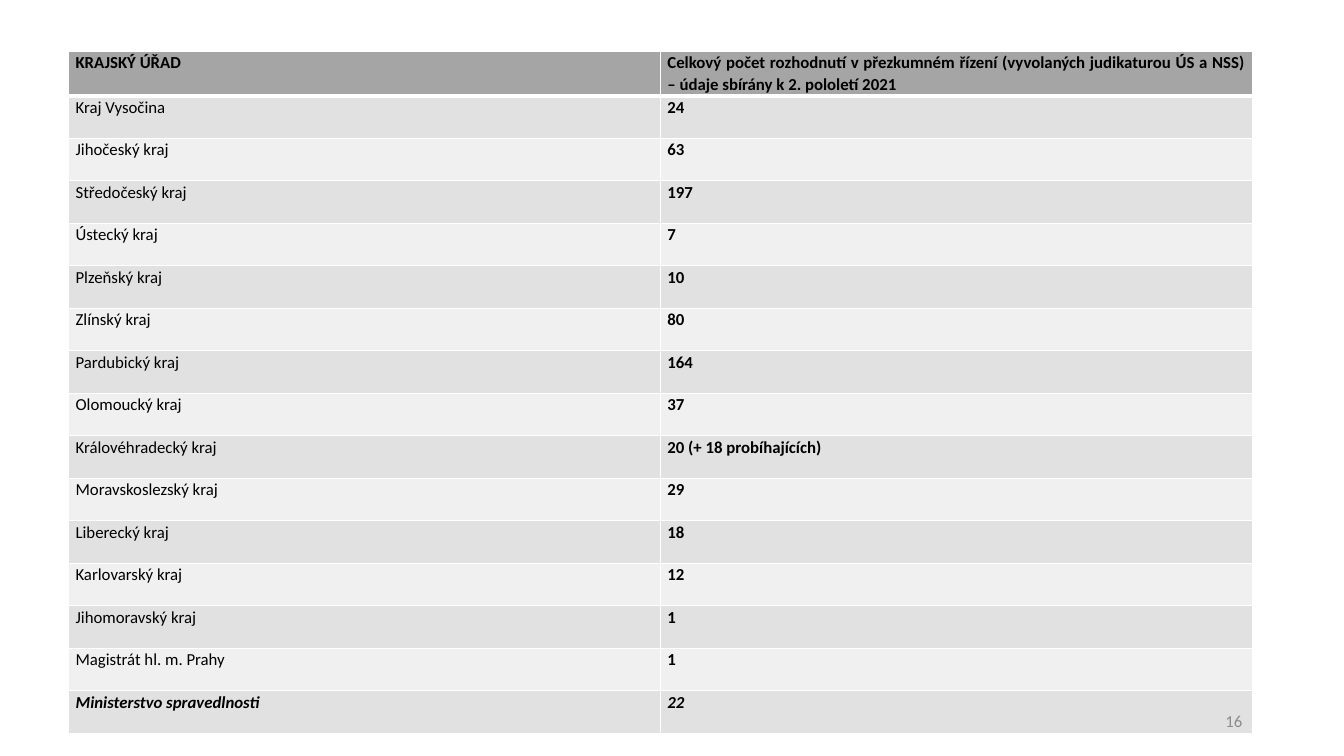
"""Build a slide with a table of review decisions by regional authority."""
from lxml.etree import SubElement
from pptx import Presentation
from pptx.dml.color import RGBColor
from pptx.enum.text import MSO_ANCHOR as Anchor, PP_ALIGN as Align
from pptx.oxml.ns import qn
from pptx.util import Inches, Pt

FONT = "Calibri"
BLACK = RGBColor(0x00, 0x00, 0x00)
WHITE = RGBColor(0xFF, 0xFF, 0xFF)
HEADER_GRAY = RGBColor(0xA5, 0xA5, 0xA5)
DARK_BAND = RGBColor(0xE1, 0xE1, 0xE1)
LIGHT_BAND = RGBColor(0xF0, 0xF0, 0xF0)
NUMBER_GRAY = RGBColor(0x8C, 0x8C, 0x8C)

HEADER = (
    "KRAJSKÝ ÚŘAD",
    "Celkový počet rozhodnutí v přezkumném řízení (vyvolaných judikaturou "
    "ÚS a NSS) – údaje sbírány k 2. pololetí 2021",
)
REGIONS = [
    ("Kraj Vysočina", "24"),
    ("Jihočeský kraj", "63"),
    ("Středočeský kraj", "197"),
    ("Ústecký kraj", "7"),
    ("Plzeňský kraj", "10"),
    ("Zlínský kraj", "80"),
    ("Pardubický kraj", "164"),
    ("Olomoucký kraj", "37"),
    ("Královéhradecký kraj", "20 (+ 18 probíhajících)"),
    ("Moravskoslezský kraj", "29"),
    ("Liberecký kraj", "18"),
    ("Karlovarský kraj", "12"),
    ("Jihomoravský kraj", "1"),
    ("Magistrát hl. m. Prahy", "1"),
]
MINISTRY = ("Ministerstvo spravedlnosti", "22")

TABLE_WIDTH = 11.74
TABLE_HEIGHT = 6.77
HEADER_HEIGHT = 0.44


def add_run(paragraph, text, color, bold=False, italic=False):
    run = paragraph.add_run()
    run.text = text
    font = run.font
    font.name, font.size = FONT, Pt(12)
    font.bold, font.italic = bold, italic
    font.color.rgb = color


def set_borders(cell, top, bottom):
    properties = cell._tc.get_or_add_tcPr()
    for side, width in (("L", 1), ("R", 1), ("T", top), ("B", bottom)):
        line = SubElement(properties, qn(f"a:ln{side}"), w=str(Pt(width)))
        fill = SubElement(line, qn("a:solidFill"))
        SubElement(fill, qn("a:srgbClr"), val=str(WHITE))


def fill_cell(cell, text, color, bold, italic):
    cell.margin_left = cell.margin_right = Inches(0.07)
    cell.margin_top = cell.margin_bottom = 0
    cell.fill.solid()
    cell.fill.fore_color.rgb = color
    paragraph = cell.text_frame.paragraphs[0]
    paragraph.alignment = Align.JUSTIFY
    paragraph.line_spacing = 1.07
    paragraph.space_after = Pt(8)
    add_run(paragraph, text, BLACK, bold, italic)


def add_decision_table(slide):
    rows = [HEADER, *REGIONS, MINISTRY]
    frame = slide.shapes.add_table(
        len(rows), len(HEADER), Inches(0.68), Inches(0.51),
        Inches(TABLE_WIDTH), Inches(TABLE_HEIGHT))
    table = frame.table
    for column in table.columns:
        column.width = Inches(TABLE_WIDTH / len(HEADER))
    body_height = (TABLE_HEIGHT - HEADER_HEIGHT) / (len(rows) - 1)
    for row_index, row in enumerate(rows):
        is_header, is_ministry = row is HEADER, row is MINISTRY
        table.rows[row_index].height = Inches(
            HEADER_HEIGHT if is_header else body_height)
        band = DARK_BAND if row_index % 2 else LIGHT_BAND
        color = HEADER_GRAY if is_header else band
        for column_index, text in enumerate(row):
            cell = table.cell(row_index, column_index)
            set_borders(cell, top=3 if row_index == 1 else 1,
                        bottom=3 if is_header else 1)
            bold = is_header or is_ministry or column_index == 1
            fill_cell(cell, text, color, bold, is_ministry)


def add_slide_number(slide, number):
    box = slide.shapes.add_textbox(
        Inches(9.42), Inches(6.95), Inches(3), Inches(0.4))
    frame = box.text_frame
    frame.word_wrap = True
    frame.vertical_anchor = Anchor.MIDDLE
    paragraph = frame.paragraphs[0]
    paragraph.alignment = Align.RIGHT
    add_run(paragraph, number, NUMBER_GRAY)


def main():
    presentation = Presentation()
    presentation.slide_width = Inches(13.33)
    presentation.slide_height = Inches(7.5)
    slide = presentation.slides.add_slide(presentation.slide_layouts[6])
    add_decision_table(slide)
    add_slide_number(slide, "16")
    presentation.save("out.pptx")


if __name__ == "__main__":
    main()
